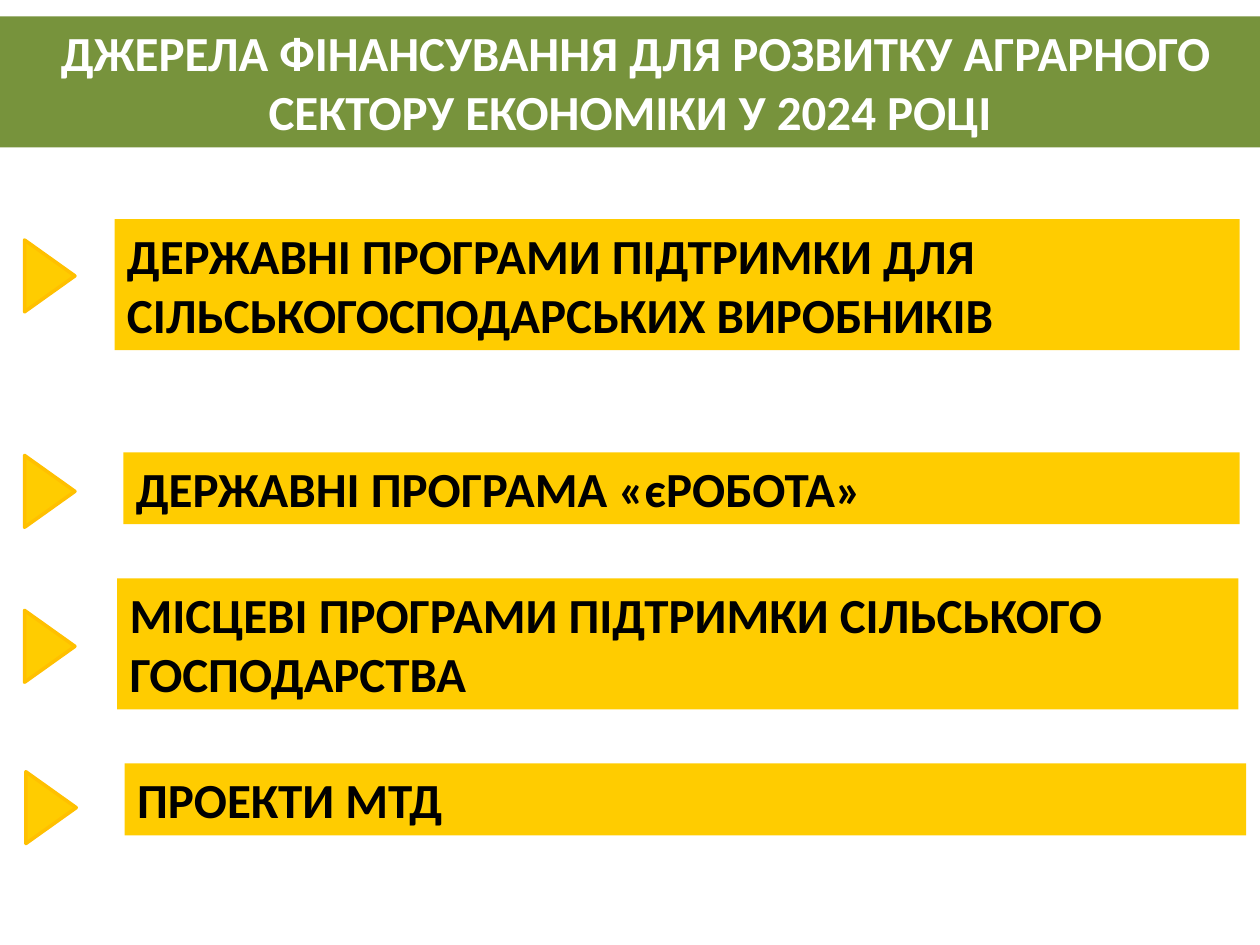
from dataclasses import dataclass

from pptx import Presentation
from pptx.dml.color import RGBColor
from pptx.enum.shapes import MSO_SHAPE
from pptx.enum.text import MSO_ANCHOR, MSO_AUTO_SIZE, PP_ALIGN
from pptx.util import Inches, Pt


@dataclass(frozen=True)
class Theme:
    green: RGBColor = RGBColor.from_string("77933C")
    yellow: RGBColor = RGBColor.from_string("FFCC00")
    amber: RGBColor = RGBColor.from_string("FFC000")
    white: RGBColor = RGBColor.from_string("FFFFFF")
    black: RGBColor = RGBColor.from_string("000000")
    font: str = "Calibri"
    size: Pt = Pt(28)
    outline: Pt = Pt(2)


theme = Theme()
prs = Presentation()
prs.slide_width, prs.slide_height = Inches(10), Inches(7.5)
slide = prs.slides.add_slide(prs.slide_layouts[6])

# Band heights by number of text lines
BAND_HEIGHT = {1: 0.57, 2: 1.04}
MARKER_WIDTH, MARKER_HEIGHT = 0.57, 0.4


def add_filled(preset, left, top, width, height, fill):
    shape = slide.shapes.add_shape(
        preset, Inches(left), Inches(top), Inches(width), Inches(height))
    shape.shadow.inherit = False
    shape.fill.solid()
    shape.fill.fore_color.rgb = fill
    shape.line.fill.background()
    return shape


def add_band(text, left, top, width, lines, fill, color, align):
    band = add_filled(MSO_SHAPE.RECTANGLE, left, top, width, BAND_HEIGHT[lines], fill)
    frame = band.text_frame
    frame.word_wrap = True
    frame.auto_size = MSO_AUTO_SIZE.SHAPE_TO_FIT_TEXT
    frame.vertical_anchor = MSO_ANCHOR.TOP
    frame.text = text
    paragraph = frame.paragraphs[0]
    paragraph.alignment = align
    font = paragraph.runs[0].font
    font.name, font.size, font.bold = theme.font, theme.size, True
    font.color.rgb = color


add_band(" ДЖЕРЕЛА ФІНАНСУВАННЯ ДЛЯ РОЗВИТКУ АГРАРНОГО СЕКТОРУ ЕКОНОМІКИ У 2024 РОЦІ",
         0, 0.13, 10, 2, theme.green, theme.white, PP_ALIGN.CENTER)

# text, left, top, width, lines, marker left, marker top
sources = [
    ("ДЕРЖАВНІ ПРОГРАМИ ПІДТРИМКИ ДЛЯ СІЛЬСЬКОГОСПОДАРСЬКИХ ВИРОБНИКІВ",
     0.91, 1.74, 8.93, 2, 0.11, 1.99),
    ("ДЕРЖАВНІ ПРОГРАМА «єРОБОТА»", 0.98, 3.59, 8.86, 1, 0.11, 3.7),
    ("МІСЦЕВІ ПРОГРАМИ ПІДТРИМКИ СІЛЬСЬКОГО ГОСПОДАРСТВА",
     0.93, 4.59, 8.9, 2, 0.11, 4.93),
    ("ПРОЕКТИ МТД", 0.99, 6.06, 8.9, 1, 0.12, 6.21),
]

for text, left, top, width, lines, marker_left, marker_top in sources:
    add_band(text, left, top, width, lines, theme.yellow, theme.black, PP_ALIGN.LEFT)
    marker = add_filled(MSO_SHAPE.ISOSCELES_TRIANGLE, marker_left, marker_top,
                        MARKER_WIDTH, MARKER_HEIGHT, theme.yellow)
    marker.rotation = 90
    marker.line.color.rgb = theme.amber
    marker.line.width = theme.outline

prs.save("out.pptx")
